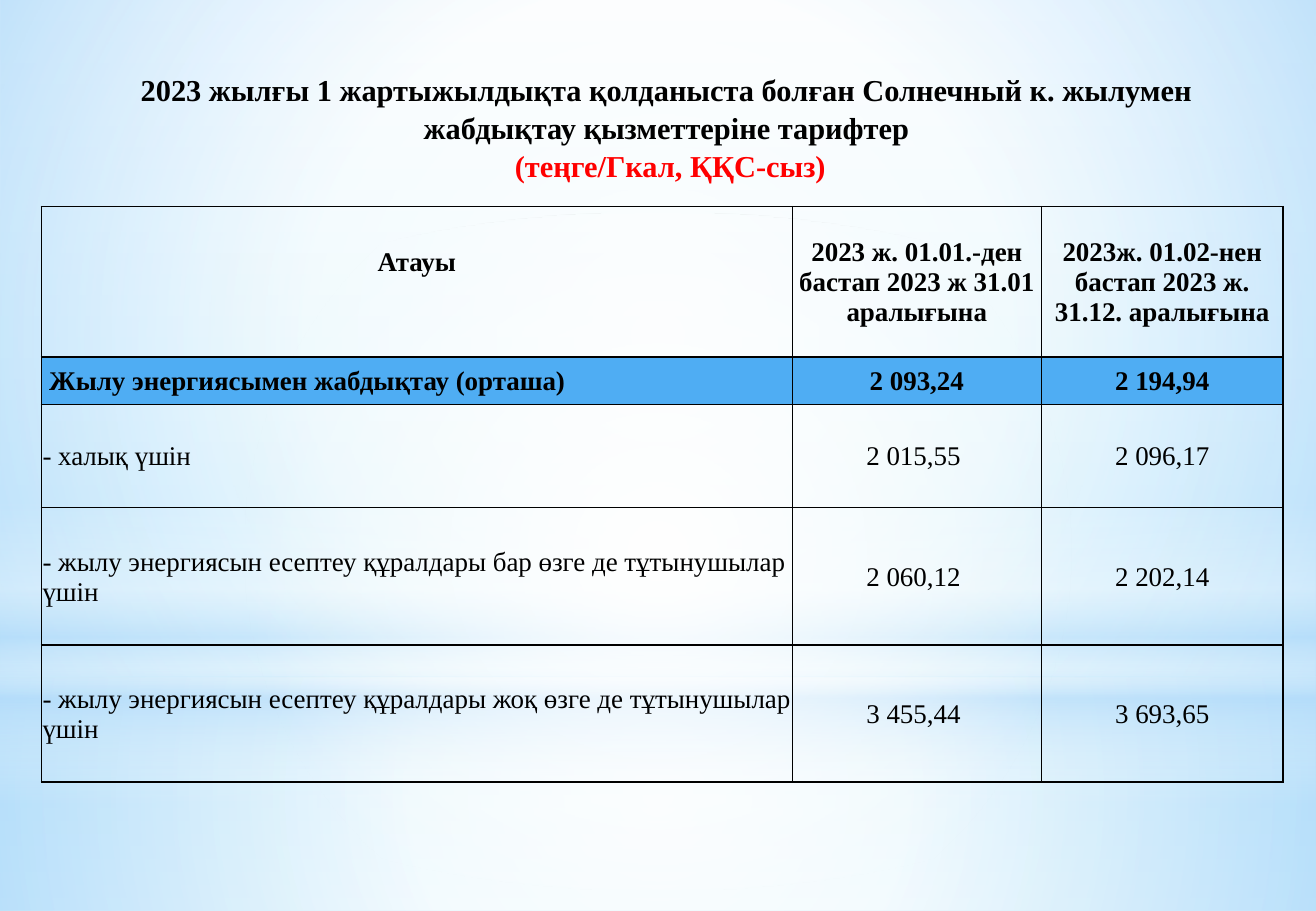
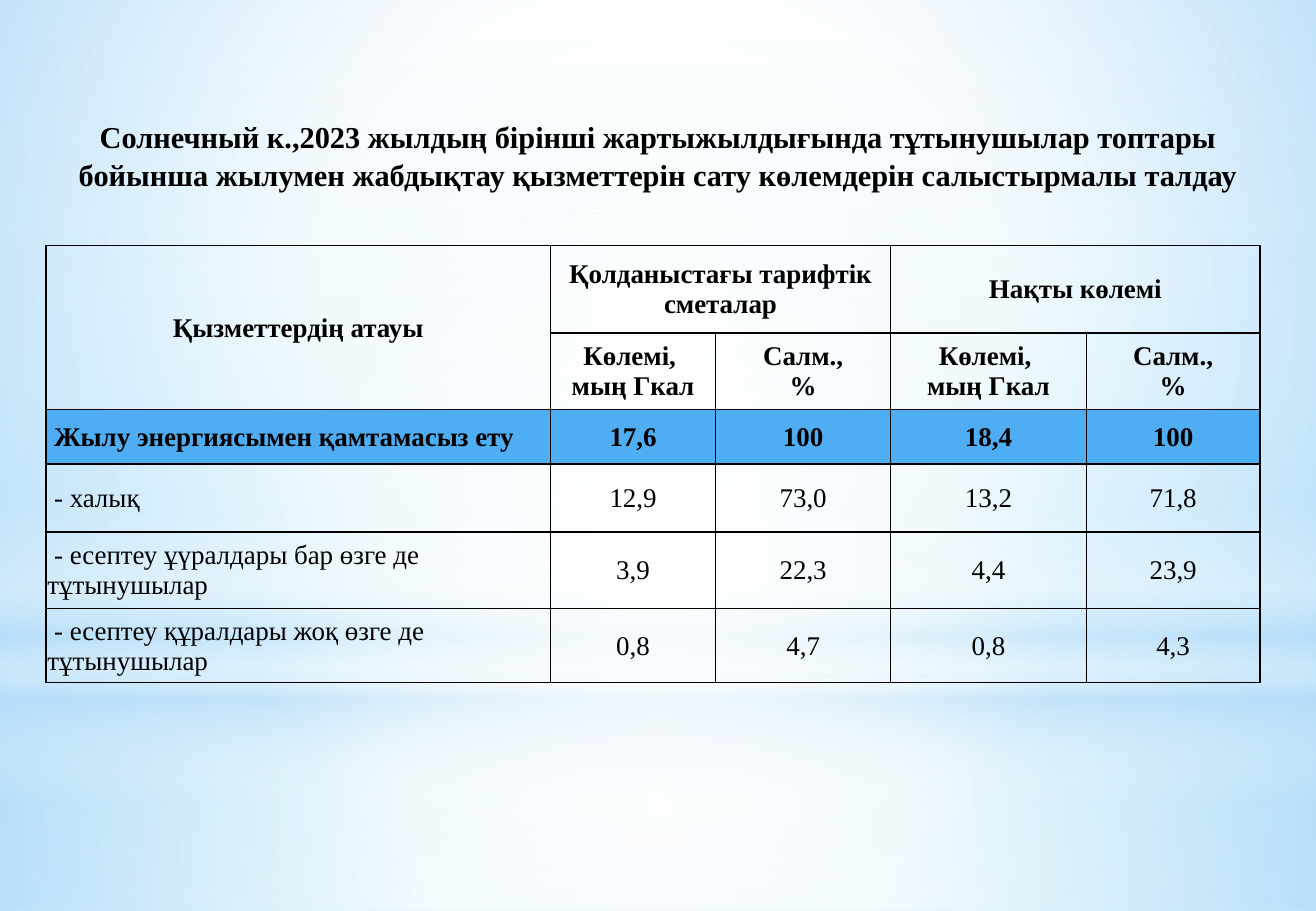
from lxml.etree import SubElement
from pptx import Presentation
from pptx.dml.color import RGBColor
from pptx.enum.shapes import MSO_SHAPE
from pptx.enum.text import MSO_ANCHOR, PP_ALIGN
from pptx.oxml import parse_xml
from pptx.oxml.ns import nsdecls, qn
from pptx.util import Inches, Pt

BLACK = RGBColor(0, 0, 0)
RED = RGBColor(255, 0, 0)
BLUE = RGBColor(0x4F, 0xAD, 0xF3)
WHITE, SKY = "FFFFFF", "B4DCFA"
FONT = "Times New Roman"
RADIAL = '<a:path path="circle"><a:fillToRect l="50000" t="50000" r="50000" b="50000"/></a:path>'
DOWN = '<a:lin ang="5400000" scaled="0"/>'


def shade(props, stops, way):
    """Swap the solid fill in props for a gradient of (place, colour, opacity) stops."""
    marks = "".join(
        f'<a:gs pos="{place * 1000}"><a:srgbClr val="{tone}">'
        f'<a:alpha val="{alpha * 1000}"/></a:srgbClr></a:gs>'
        for place, tone, alpha in stops)
    grad = parse_xml(f'<a:gradFill {nsdecls("a")} rotWithShape="1">'
                     f'<a:gsLst>{marks}</a:gsLst>{way}</a:gradFill>')
    props.replace(props.find(qn("a:solidFill")), grad)


def style(para, size, bold, align, color=BLACK):
    font = para.font
    font.name, font.size, font.bold = FONT, Pt(size), bold
    font.color.rgb = color
    para.alignment = align


deck = Presentation()
deck.slide_width, deck.slide_height = Inches(10.83), Inches(7.5)
blank = deck.slide_layouts[6]
pages = [deck.slides.add_slide(blank) for _ in range(2)]

# Shared backdrop, kept on the master
master = deck.slide_master
master.background.fill.solid()
master.background.fill.fore_color.rgb = BLUE
shade(master.element.find(".//" + qn("p:bgPr")),
      [(0, "F7FCFE", 100), (74, "B7E8FA", 100), (83, "B7E8FA", 100),
       (100, "CFF0FB", 100)], DOWN)
glows = [
    (MSO_SHAPE.RECTANGLE, 5.58, 1.92, RADIAL,
     [(0, WHITE, 91), (37, WHITE, 76), (100, SKY, 79)]),
    (MSO_SHAPE.RECTANGLE, 0, 5.58, RADIAL,
     [(0, WHITE, 89), (48, WHITE, 62), (100, SKY, 79)]),
    (MSO_SHAPE.RECTANGLE, 4.12, 2.5, DOWN,
     [(0, WHITE, 0), (29, WHITE, 30), (45, SKY, 40), (55, WHITE, 26),
      (65, SKY, 60), (100, WHITE, 0)]),
    (MSO_SHAPE.OVAL, 1.75, 5.58, RADIAL, [(0, WHITE, 100), (56, WHITE, 0)]),
]
for index, (kind, top, height, way, stops) in enumerate(glows):
    glow = pages[0].shapes.add_shape(kind, 0, Inches(top), deck.slide_width, Inches(height))
    glow.shadow.inherit = False
    glow.line.fill.background()
    glow.fill.solid()
    glow.fill.fore_color.rgb = BLUE
    shade(glow.element.spPr, stops, way)
    glow.element.nvSpPr.cNvPr.set("id", str(20 + index))
    master.shapes.element.insert(2 + index, glow.element)

# Each slide: title box and lines, table place, columns, rows, cells, blue row, merges
plans = [
    ((0.61, 0.52, 9.75, 1.1),
     [("2023 жылғы 1 жартыжылдықта қолданыста болған Солнечный к. жылумен "
       "жабдықтау қызметтеріне тарифтер", BLACK),
      (" (теңге/Гкал, ҚҚС-сыз)", RED)],
     (0.34, 1.7), [6.18, 2.05, 1.99], [1.24, 0.39, 0.85, 1.13, 1.13],
     [["Атауы", "2023 ж. 01.01.-ден бастап 2023 ж 31.01 аралығына",
       "2023ж. 01.02-нен бастап 2023 ж. 31.12. аралығына"],
      [" Жылу энергиясымен жабдықтау (орташа)", "2 093,24", "2 194,94"],
      ["- халық үшін", "2 015,55 ", "2 096,17"],
      ["- жылу энергиясын есептеу құралдары бар өзге де тұтынушылар үшін",
       "2 060,12 ", "2 202,14"],
      ["- жылу энергиясын есептеу құралдары жоқ өзге де тұтынушылар үшін",
       "3 455,44 ", "3 693,65"]],
     1, []),
    ((0.54, 0.91, 9.75, 0.79),
     [("Солнечный к.,2023 жылдың бірінші жартыжылдығында тұтынушылар топтары "
       "бойынша жылумен жабдықтау қызметтерін сату көлемдерін салыстырмалы талдау", BLACK)],
     (0.38, 2.02), [4.15, 1.36, 1.44, 1.61, 1.43], [0.72, 0.63, 0.45, 0.56, 0.63, 0.61],
     [["Қызметтердің атауы", "Қолданыстағы тарифтік сметалар", "", "Нақты көлемі", ""],
      [""] + ["Көлемі, \vмың Гкал", "Салм.,\v%"] * 2,
      [" Жылу энергиясымен қамтамасыз ету", "17,6", "100", "18,4", "100"],
      [" - халық", "12,9", "73,0", "13,2", "71,8"],
      [" - есептеу ұүралдары бар өзге де тұтынушылар", "3,9", "22,3", "4,4", "23,9"],
      [" - есептеу құралдары жоқ өзге де тұтынушылар", "0,8", "4,7", "0,8", "4,3"]],
     2, [(0, 0, 1, 0), (0, 1, 0, 2), (0, 3, 0, 4)]),
]

for page, (box, lines, place, cols, rows, texts, total, spans) in zip(pages, plans):
    frame = page.shapes.add_textbox(*map(Inches, box)).text_frame
    frame.word_wrap = True
    for index, (text, color) in enumerate(lines):
        para = frame.add_paragraph() if index else frame.paragraphs[0]
        para.text = text
        para.line_spacing = 1.05
        style(para, 18, True, PP_ALIGN.CENTER, color)

    left, top = map(Inches, place)
    table = page.shapes.add_table(len(rows), len(cols), left, top,
                                  Inches(sum(cols)), Inches(sum(rows))).table
    table.first_row = table.horz_banding = False
    for col, width in zip(table.columns, cols):
        col.width = Inches(width)
    for row, height in zip(table.rows, rows):
        row.height = Inches(height)
    for r, line in enumerate(texts):
        for c, text in enumerate(line):
            cell = table.cell(r, c)
            cell.text_frame.text = text
            cell.vertical_anchor = MSO_ANCHOR.MIDDLE
            cell.margin_left = cell.margin_right = cell.margin_top = Inches(0.01)
            cell.margin_bottom = 0
            label = c == 0 and r >= total
            style(cell.text_frame.paragraphs[0], 16, r <= total,
                  PP_ALIGN.LEFT if label else PP_ALIGN.CENTER)
            props = cell._tc.get_or_add_tcPr()
            for side in ("a:lnL", "a:lnR", "a:lnT", "a:lnB"):
                edge = SubElement(props, qn(side), w=str(Pt(1)))
                ink = SubElement(edge, qn("a:solidFill"))
                SubElement(ink, qn("a:srgbClr"), val=str(BLACK))
            if r == total:
                cell.fill.solid()
                cell.fill.fore_color.rgb = BLUE
            else:
                cell.fill.background()
    for r, c, down, across in spans:
        table.cell(r, c).merge(table.cell(down, across))
    if not spans:
        name = table.cell(0, 0)
        name.vertical_anchor = MSO_ANCHOR.TOP
        name.margin_top = Inches(0.34)

deck.save("out.pptx")
